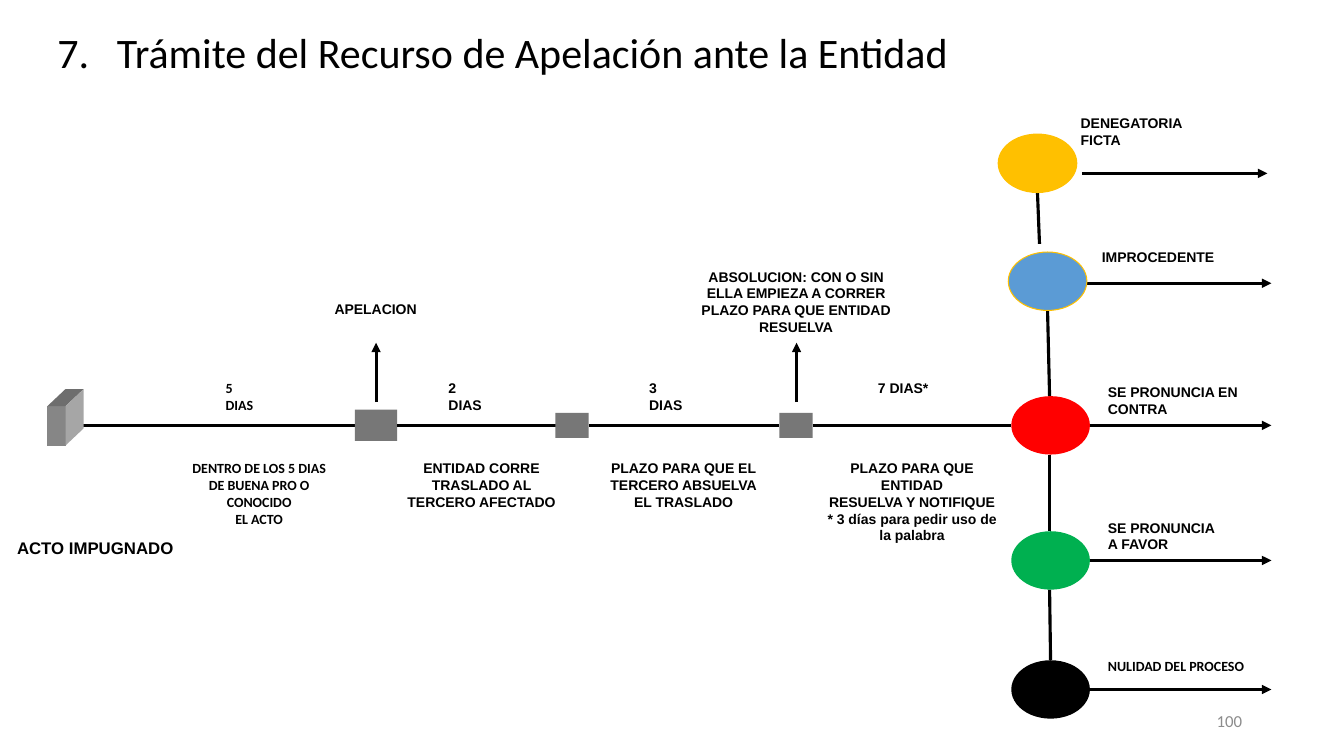
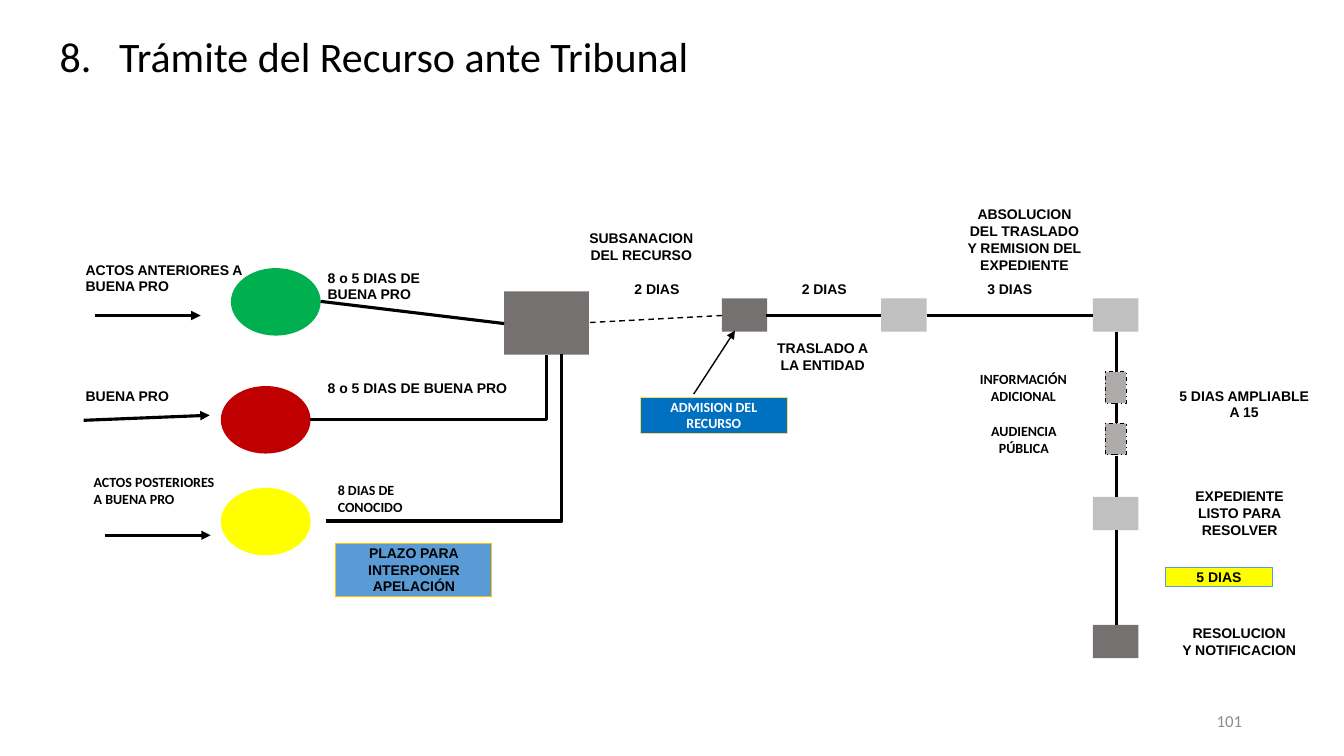
from lxml import etree
from pptx import Presentation
from pptx.dml.color import RGBColor
from pptx.enum.dml import MSO_LINE
from pptx.enum.shapes import MSO_CONNECTOR, MSO_SHAPE
from pptx.enum.text import MSO_ANCHOR, MSO_AUTO_SIZE, PP_ALIGN
from pptx.oxml.ns import qn
from pptx.util import Inches, Pt

RECT, OVAL = MSO_SHAPE.RECTANGLE, MSO_SHAPE.OVAL
STRAIGHT, ELBOW = MSO_CONNECTOR.STRAIGHT, MSO_CONNECTOR.ELBOW
LEFT, CENTER, RIGHT = PP_ALIGN.LEFT, PP_ALIGN.CENTER, PP_ALIGN.RIGHT
JUSTIFY = PP_ALIGN.JUSTIFY
TOP, MIDDLE = MSO_ANCHOR.TOP, MSO_ANCHOR.MIDDLE
DASH, DASH_DOT = MSO_LINE.DASH, MSO_LINE.DASH_DOT
FIT, NO_FIT = MSO_AUTO_SIZE.SHAPE_TO_FIT_TEXT, MSO_AUTO_SIZE.NONE
ARIAL, CALIBRI = "Arial", "Calibri"
TITLE_ONLY = 5

COLORS = {
    "black": "000000", "white": "FFFFFF", "number": "8C8C8C",
    "step": "777777", "dark": "767171", "light": "C0C0C0", "optional": "AFABAB",
    "front": "868686", "top": "6E6E6E", "side": "A6A6A6",
    "red": "FF0000", "deep_red": "C00000", "green": "00B050",
    "yellow": "FFFF00", "gold": "FFC000", "pale_gold": "FFD966",
    "blue": "5B9BD5", "strong_blue": "0070C0",
}


def rgb(name):
    return RGBColor.from_string(COLORS[name])


class Deck:
    def __init__(self):
        self.prs = Presentation()
        self.prs.slide_width, self.prs.slide_height = Inches(13.33), Inches(7.5)

    def slide(self, title, item, page, left, height, insets):
        """Add a slide whose title is numbered and whose labels use insets."""
        self.s = self.prs.slides.add_slide(self.prs.slide_layouts[TITLE_ONLY])
        self.insets = insets
        sp = self.s.shapes.title
        sp.left, sp.top = Inches(left), Inches(0)
        sp.width, sp.height = Inches(13.33 - left), Inches(height)
        tf = sp.text_frame
        tf.auto_size, tf.vertical_anchor = NO_FIT, MIDDLE
        p = tf.paragraphs[0]
        self.run(p, title, 30, CALIBRI, "black", False)
        p.alignment = JUSTIFY
        pPr = p._p.get_or_add_pPr()
        pPr.set("marL", str(Inches(0.59)))
        pPr.set("indent", str(-Inches(0.59)))
        etree.SubElement(pPr, qn("a:buFont"), typeface="+mj-lt")
        etree.SubElement(pPr, qn("a:buAutoNum"), type="arabicPeriod", startAt=str(item))
        self.label(9.42, 6.95, 3, 0.4, str(page), RIGHT, CALIBRI, 12, "number",
                   bold=False, anchor=MIDDLE, insets=(0.1, 0.05), fit=NO_FIT)

    def run(self, p, text, size, font, color, bold):
        r = p.add_run()
        r.text = text
        r.font.size, r.font.name, r.font.bold = Pt(size), font, bold
        r.font.color.rgb = rgb(color)

    def add_text(self, sp, text, align, font, size=10, color="black", bold=True,
                 anchor=TOP, wrap=True, insets=None, fit=FIT):
        """Fill a shape with one paragraph for each line of text."""
        tf = sp.text_frame
        tf.word_wrap, tf.auto_size, tf.vertical_anchor = wrap, fit, anchor
        dx, dy = insets or self.insets
        tf.margin_left = tf.margin_right = Inches(dx)
        tf.margin_top = tf.margin_bottom = Inches(dy)
        for i, line in enumerate(text.split("\n")):
            p = tf.add_paragraph() if i else tf.paragraphs[0]
            p.alignment = align
            self.run(p, line, size, font, color, bold)

    def label(self, x, y, w, h, text, align=CENTER, font=ARIAL, size=10,
              color="black", **style):
        sp = self.s.shapes.add_textbox(Inches(x), Inches(y), Inches(w), Inches(h))
        self.add_text(sp, text, align, font, size, color, **style)

    def paint(self, sp, fill, line=None, dash=None):
        sp.shadow.inherit = False
        sp.fill.solid()
        sp.fill.fore_color.rgb = rgb(fill)
        if line:
            sp.line.color.rgb = rgb(line)
            sp.line.width = Pt(0.75)
            sp.line.dash_style = dash
        else:
            sp.line.fill.background()

    def shape(self, kind, x, y, w, h, fill, line=None, dash=None):
        sp = self.s.shapes.add_shape(kind, Inches(x), Inches(y), Inches(w), Inches(h))
        self.paint(sp, fill, line, dash)
        return sp

    def box(self, x, y, w, h, text, fill, line, font=ARIAL, color="black"):
        sp = self.shape(RECT, x, y, w, h, fill, line)
        self.add_text(sp, text, CENTER, font, color=color)

    def face(self, points, fill):
        fb = self.s.shapes.build_freeform(*map(Inches, points[0]))
        fb.add_line_segments([tuple(map(Inches, pt)) for pt in points[1:]])
        self.paint(fb.convert_to_shape(), fill)

    def line(self, x1, y1, x2, y2, arrow=False, width=2.25, dash=None, bent=False):
        c = self.s.shapes.add_connector(
            ELBOW if bent else STRAIGHT, *map(Inches, (x1, y1, x2, y2)))
        c.line.color.rgb = rgb("black")
        c.line.width = Pt(width)
        c.line.dash_style = dash
        spPr = c._element.spPr
        if bent:
            spPr.find(qn("a:prstGeom")).set("prst", "bentConnector2")
        if arrow:
            etree.SubElement(spPr.find(qn("a:ln")), qn("a:tailEnd"), type="triangle")
        etree.SubElement(spPr, qn("a:effectLst"))


def entity_slide(d):
    d.slide("Trámite del Recurso de Apelación ante la Entidad", 7, 100,
            0.47, 1.02, (0.1, 0.05))
    axis = 4.22

    # Timeline
    steps = [(3.52, 0.42, 0.31), (5.51, 0.33, 0.25), (7.73, 0.33, 0.25)]
    start = 0.65
    for x, w, h in steps:
        d.line(start, axis, x, axis)
        d.shape(RECT, x, axis - h / 2, w, h, "step")
        start = x + w
    d.line(start, axis, 10.03, axis)
    for x in (3.73, 7.9):
        d.line(x, 3.99, x, 3.4, arrow=True)

    # Challenged act, drawn as a block
    x, mid, right = 0.47, 0.65, 0.83
    d.face([(x, 4.03), (mid, 4.03), (mid, 4.42), (x, 4.42)], "front")
    d.face([(x, 4.03), (mid, 3.86), (right, 3.86), (mid, 4.03)], "top")
    d.face([(mid, 4.03), (right, 3.86), (right, 4.25), (mid, 4.42)], "side")
    d.label(0.05, 5.29, 1.79, 0.3, "ACTO IMPUGNADO", size=12)

    for x, w, text, font in [(2.14, 0.57, "5 DIAS", CALIBRI), (4.35, 0.64, "2 DIAS", ARIAL),
                             (6.34, 0.64, "3 DIAS", ARIAL), (8.61, 0.7, "7 DIAS*", ARIAL)]:
        d.label(x, 3.72, w, 0.27, text, LEFT, font, wrap=False)
    for x, w, h, text, font in [
        (1.74, 1.66, 0.77, "DENTRO DE LOS 5 DIAS\nDE BUENA PRO O\nCONOCIDO\nEL ACTO", CALIBRI),
        (3.83, 1.89, 0.6, "ENTIDAD CORRE\nTRASLADO AL TERCERO AFECTADO", ARIAL),
        (5.78, 2, 0.6, "PLAZO PARA QUE EL\nTERCERO ABSUELVA\nEL TRASLADO", ARIAL),
        (8.1, 1.89, 0.94, "PLAZO PARA QUE ENTIDAD\nRESUELVA Y NOTIFIQUE\n"
                          "* 3 días para pedir uso de la palabra", ARIAL),
    ]:
        d.label(x, 4.51, w, h, text, font=font)
    d.label(2.99, 2.93, 1.47, 0.27, "APELACION")
    d.label(6.5, 2.61, 2.79, 0.77, "ABSOLUCION: CON O SIN\nELLA EMPIEZA A CORRER\n"
                                   "PLAZO PARA QUE ENTIDAD\nRESUELVA")

    # Possible outcomes
    for link in [(10.29, 1.91, 10.31, 2.42), (10.39, 3.08, 10.41, 3.93),
                 (10.41, 4.51, 10.41, 5.27), (10.41, 5.85, 10.42, 6.55)]:
        d.line(*link)
    for x, y, fill, edge, arrow_x, arrow_y in [
        (9.9, 1.33, "gold", "gold", 10.73, 1.72),
        (10, 2.5, "blue", "gold", 10.77, 2.81),
        (10.03, 3.93, "red", None, 10.77, axis),
        (10.03, 5.27, "green", None, 10.77, 5.56),
        (10.03, 6.55, "black", None, 10.77, 6.84),
    ]:
        d.line(arrow_x, arrow_y, arrow_x + 1.84, arrow_y, arrow=True)
        d.shape(OVAL, x, y, 0.78, 0.58, fill, edge)
    for x, y, w, h, text, font in [
        (10.62, 1.09, 2.08, 0.43, "DENEGATORIA\nFICTA", ARIAL),
        (10.83, 2.42, 1.77, 0.27, "IMPROCEDENTE", ARIAL),
        (10.89, 3.76, 1.76, 0.43, "SE PRONUNCIA EN CONTRA", ARIAL),
        (10.89, 5.1, 1.76, 0.43, "SE PRONUNCIA\nA FAVOR", ARIAL),
        (10.89, 6.47, 1.76, 0.27, "NULIDAD DEL PROCESO", CALIBRI),
    ]:
        d.label(x, y, w, h, text, LEFT, font)


def tribunal_slide(d):
    d.slide("Trámite del Recurso ante Tribunal", 8, 101, 0.49, 1.11, (0.02, 0.01))

    # Acts that can be appealed
    for x, y, fill in [(2.29, 2.66, "green"), (2.19, 3.83, "deep_red"), (2.19, 4.84, "yellow")]:
        d.shape(OVAL, x, y, 0.89, 0.67, fill)
    for arrow in [(0.94, 3.13, 1.99, 3.13), (0.83, 4.17, 2.08, 4.12), (1.04, 5.31, 2.09, 5.31)]:
        d.line(*arrow, arrow=True)
    for x, y, w, h, text, font in [
        (0.83, 2.58, 1.67, 0.36, "ACTOS ANTERIORES A BUENA PRO", ARIAL),
        (0.83, 3.83, 1.63, 0.19, "BUENA PRO", ARIAL),
        (0.91, 4.69, 2.06, 0.36, "ACTOS POSTERIORES\nA BUENA PRO", CALIBRI),
        (3.23, 2.66, 2.49, 0.36, "8 o 5 DIAS DE\nBUENA PRO", ARIAL),
        (3.23, 3.75, 1.92, 0.19, "8 o 5 DIAS DE BUENA PRO", ARIAL),
        (3.33, 4.77, 1.88, 0.36, "8 DIAS DE\nCONOCIDO", CALIBRI),
    ]:
        d.label(x, y, w, h, text, LEFT, font)
    d.box(3.33, 5.39, 1.55, 0.53, "PLAZO PARA\nINTERPONER\nAPELACIÓN", "blue", "gold")

    # Stages
    d.shape(RECT, 5, 2.89, 0.84, 0.63, "dark")
    for x, y, fill in [(7.16, 2.96, "dark"), (8.74, 2.96, "light"), (10.84, 2.96, "light"),
                       (10.84, 4.93, "light"), (10.84, 6.2, "dark")]:
        d.shape(RECT, x, y, 0.45, 0.33, fill)
    for y in (3.69, 4.2):
        d.shape(RECT, 10.96, y, 0.21, 0.31, "optional", "black", DASH_DOT)

    # Links between stages
    d.line(3.18, 2.99, 5, 3.21)
    d.line(3.08, 4.16, 5.42, 3.52, bent=True)
    d.line(3.23, 5.17, 5.57, 3.51, bent=True)
    d.line(7.16, 3.13, 5.84, 3.2, width=1, dash=DASH)
    d.line(6.88, 3.91, 7.29, 3.28, arrow=True, width=1)
    for x1, x2 in [(7.6, 8.74), (9.19, 10.84)]:
        d.line(x1, 3.13, x2, 3.13)
    for y1, y2 in [(3.29, 3.69), (4.01, 4.2), (4.52, 4.93), (5.26, 6.2)]:
        d.line(11.07, y1, 11.07, y2)

    # Terms and stage names
    for x, text in [(6.27, "2 DIAS"), (7.93, "2 DIAS"), (9.77, "3 DIAS")]:
        d.label(x, 2.77, 0.49, 0.19, text, wrap=False)
    for x, y, w, h, text, font in [
        (5.63, 2.27, 1.46, 0.36, "SUBSANACION\nDEL RECURSO", ARIAL),
        (7.66, 3.36, 1, 0.36, "TRASLADO A\nLA ENTIDAD", ARIAL),
        (9.17, 2.03, 1.98, 0.7, "ABSOLUCION\nDEL TRASLADO\nY REMISION DEL\nEXPEDIENTE", ARIAL),
        (9.68, 3.67, 0.94, 0.36, "INFORMACIÓN\nADICIONAL", CALIBRI),
        (9.79, 4.18, 0.73, 0.36, "AUDIENCIA\nPÚBLICA", CALIBRI),
        (11.35, 3.83, 1.98, 0.36, "5 DIAS AMPLIABLE\nA 15", ARIAL),
        (11.83, 4.83, 0.93, 0.53, "EXPEDIENTE\nLISTO PARA\nRESOLVER", ARIAL),
        (11.7, 6.19, 1.18, 0.36, "RESOLUCION\nY NOTIFICACION", ARIAL),
    ]:
        d.label(x, y, w, h, text, font=font, wrap=False)
    d.box(6.35, 3.94, 1.46, 0.36, "ADMISION DEL\nRECURSO", "strong_blue", "pale_gold",
          CALIBRI, "white")
    d.box(11.56, 5.63, 1.06, 0.19, "5 DIAS", "yellow", "blue")


def main():
    d = Deck()
    entity_slide(d)
    tribunal_slide(d)
    d.prs.save("out.pptx")


if __name__ == "__main__":
    main()
